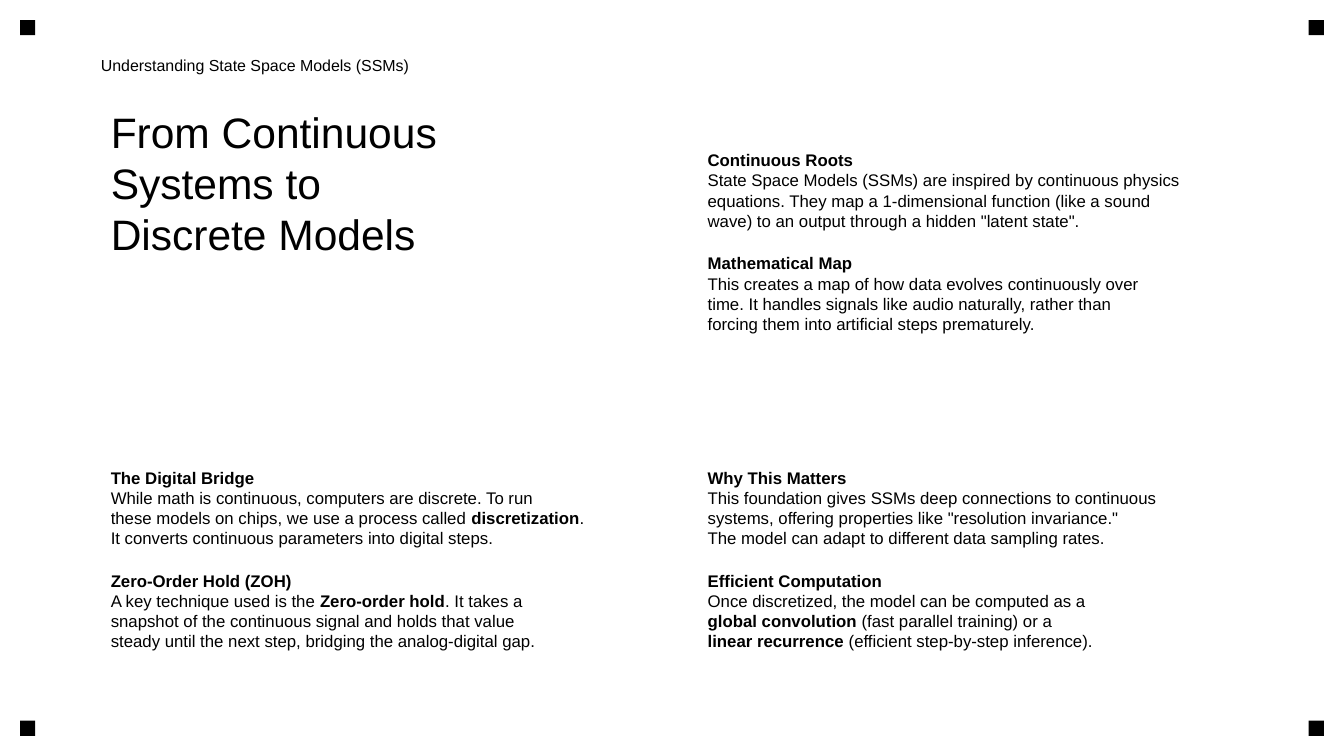
from pptx import Presentation, util as u
from pptx.dml.color import RGBColor
from pptx.enum import shapes, text

# Content: a line is a list of (text, bold) runs
HEADER = "Understanding State Space Models (SSMs)"
TITLE = ["From Continuous", "Systems to", "Discrete Models"]
# Each panel: (column, row, sections); bold phrases stand between asterisks
PANELS = [
    (1, 0, [
        ["*Continuous Roots*",
         "State Space Models (SSMs) are inspired by continuous physics",
         "equations. They map a 1-dimensional function (like a sound",
         'wave) to an output through a hidden "latent state".'],
        ["*Mathematical Map*",
         "This creates a map of how data evolves continuously over",
         "time. It handles signals like audio naturally, rather than",
         "forcing them into artificial steps prematurely."],
    ]),
    (0, 1, [
        ["*The Digital Bridge*",
         "While math is continuous, computers are discrete. To run",
         "these models on chips, we use a process called *discretization*.",
         "It converts continuous parameters into digital steps."],
        ["*Zero-Order Hold (ZOH)*",
         "A key technique used is the *Zero-order hold*. It takes a",
         "snapshot of the continuous signal and holds that value",
         "steady until the next step, bridging the analog-digital gap."],
    ]),
    (1, 1, [
        ["*Why This Matters*",
         "This foundation gives SSMs deep connections to continuous",
         'systems, offering properties like "resolution invariance."',
         "The model can adapt to different data sampling rates."],
        ["*Efficient Computation*",
         "Once discretized, the model can be computed as a",
         "*global convolution* (fast parallel training) or a",
         "*linear recurrence* (efficient step-by-step inference)."],
    ]),
]

# Layout in inches
SLIDE_W, SLIDE_H = 13.33, 7.5
MARGIN, GAP_X, GAP_Y = 1, 0.5, 0.3
PANEL_W, PANEL_H = 5.42, 2.85
MARK, MARK_INSET = 0.15, 0.2
PANEL_INSETS = (0.1, 0.05, 0.05, 0.1)
BLACK, WHITE = "000000", "FFFFFF"


def color(value):
    return RGBColor.from_string(value)


def add_mark(x, y):
    s = slide.shapes.add_shape(shapes.MSO_SHAPE.RECTANGLE, u.Inches(x), u.Inches(y),
                               u.Inches(MARK), u.Inches(MARK))
    s.shadow.inherit = False
    s.fill.solid()
    s.fill.fore_color.rgb = color(BLACK)
    s.line.fill.background()


def add_text(box, sections, size, anchor, insets):
    tf = slide.shapes.add_textbox(*map(u.Inches, box)).text_frame
    tf.word_wrap = True
    tf.vertical_anchor = anchor
    (tf.margin_left, tf.margin_top,
     tf.margin_right, tf.margin_bottom) = map(u.Inches, insets)
    p = None
    for section in sections:
        if p is not None:
            p.space_after = u.Pt(16)
        for line in section:
            p = tf.paragraphs[0] if p is None else tf.add_paragraph()
            for i, part in enumerate(line.split("*")):
                if part:
                    r = p.add_run()
                    r.text = part
                    r.font.name = "Arial"
                    r.font.size = u.Pt(size)
                    r.font.bold = i % 2 == 1
                    r.font.color.rgb = color(BLACK)


def panel_box(col, row):
    return (MARGIN + col * (PANEL_W + GAP_X), MARGIN + row * (PANEL_H + GAP_Y),
            PANEL_W, PANEL_H)


prs = Presentation()
prs.slide_width, prs.slide_height = u.Inches(SLIDE_W), u.Inches(SLIDE_H)
slide = prs.slides.add_slide(prs.slide_layouts[6])
slide.background.fill.solid()
slide.background.fill.fore_color.rgb = color(WHITE)

# Corner marks
for y in (MARK_INSET, SLIDE_H - MARK_INSET - MARK):
    for x in (MARK_INSET, SLIDE_W - MARK_INSET - MARK):
        add_mark(x, y)

# Title and text panels
add_text(panel_box(0, 0), [TITLE], 30.4, text.MSO_ANCHOR.TOP, PANEL_INSETS)
for col, row, sections in PANELS:
    add_text(panel_box(col, row), sections, 12, text.MSO_ANCHOR.MIDDLE, PANEL_INSETS)

# Header
add_text((MARGIN, 0.4, 6, 0.5), [[HEADER]], 11.4, text.MSO_ANCHOR.MIDDLE, (0, 0, 0, 0))

prs.save("out.pptx")
